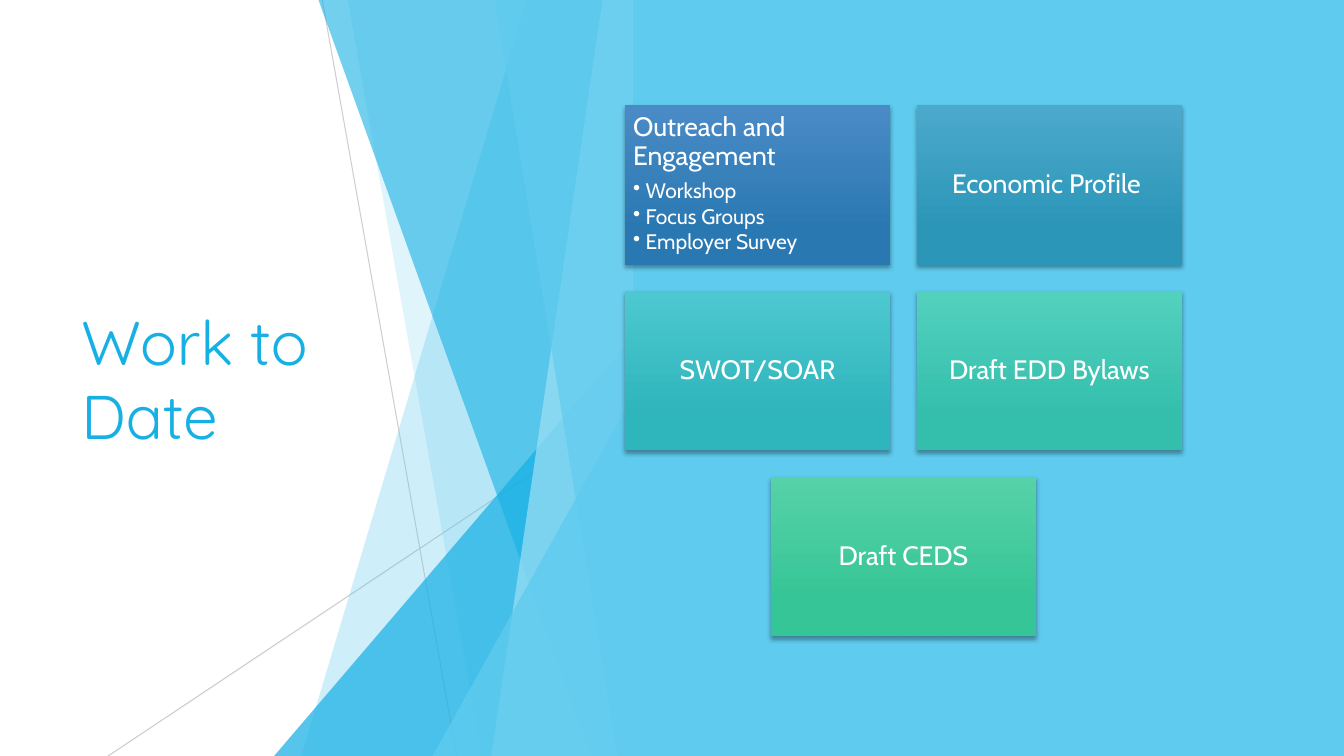
from dataclasses import dataclass

from lxml import etree
from pptx import Presentation
from pptx.dml.color import RGBColor
from pptx.enum.shapes import MSO_CONNECTOR, MSO_SHAPE
from pptx.enum.text import MSO_ANCHOR, MSO_AUTO_SIZE, PP_ALIGN
from pptx.oxml.ns import qn
from pptx.util import Emu, Pt

RECTANGLE, TRIANGLE = MSO_SHAPE.RECTANGLE, MSO_SHAPE.RIGHT_TRIANGLE
TRIANGLE = MSO_SHAPE.ISOSCELES_TRIANGLE
STRAIGHT = MSO_CONNECTOR.STRAIGHT
LEFT, CENTER = PP_ALIGN.LEFT, PP_ALIGN.CENTER
TOP, MIDDLE = MSO_ANCHOR.TOP, MSO_ANCHOR.MIDDLE
NO_AUTOFIT = MSO_AUTO_SIZE.NONE

EMU_PER_PX = 9525
SLIDE_W, SLIDE_H = 1280, 720
PANEL_X = 603
CARD_W, CARD_H = 253, 152
CARD_STEP_X, CARD_STEP_Y = 278, 177
CARDS_X, CARDS_Y = 595, 100


@dataclass(frozen=True)
class Theme:
    title_font: str = "Quicksand"
    body_font: str = "Cabin"
    title_size: int = 44
    card_size: int = 19
    bullet_size: int = 15
    accent: str = "17B0E4"
    sky: str = "5FCBEF"
    pale: str = "9FE0F5"
    hairline: str = "BFBFBF"
    white: str = "FFFFFF"
    shadow: str = "000000"


THEME = Theme()

# Card rows: heading, bullets, gradient top and bottom
CARD_ROWS = [
    [("Outreach and Engagement", ["Workshop", "Focus Groups", "Employer Survey"], "4A8BC6", "2A78B2"),
     ("Economic Profile ", [], "4BA9CC", "2C96B8")],
    [("SWOT/SOAR", [], "4DC8D0", "2FB5BC"),
     ("Draft EDD Bylaws", [], "52D1BE", "34BFAC")],
    [("Draft CEDS", [], "56D2A7", "36C596")],
]


def px(value):
    return Emu(value * EMU_PER_PX)


def set_alpha(fill, color, opacity):
    """Give a solid fill its colour and its opacity in percent."""
    fill.solid()
    fill.fore_color.rgb = RGBColor.from_string(color)
    if opacity < 100:
        element = fill._xPr.find(qn("a:solidFill"))[0]
        etree.SubElement(element, qn("a:alpha"), val=str(opacity * 1000))


def add_block(slide, kind, x, y, w, h):
    block = slide.shapes.add_shape(kind, px(x), px(y), px(w), px(h))
    block.shadow.inherit = False
    block.line.fill.background()
    return block


def add_hairline(slide, start, end, opacity):
    hairline = slide.shapes.add_connector(STRAIGHT, *map(px, start + end))
    hairline.line.width = Pt(0.75)
    set_alpha(hairline.line.fill, THEME.hairline, opacity)
    etree.SubElement(hairline._element.spPr, qn("a:effectLst"))


def add_band(slide, top_x, bottom_x, color, opacity):
    """Slanted band that runs from its left edge to the panel."""
    outline = slide.shapes.build_freeform(top_x, -1, scale=EMU_PER_PX)
    outline.add_line_segments([(PANEL_X, -1), (PANEL_X, SLIDE_H), (bottom_x, SLIDE_H)])
    band = outline.convert_to_shape()
    band.shadow.inherit = False
    band.line.fill.background()
    set_alpha(band.fill, color, opacity)


def add_wedge(slide, x, y, color, opacity):
    """Triangle that rises from the slide's foot to the panel's edge."""
    wedge = add_block(slide, TRIANGLE, x, y, PANEL_X - x, SLIDE_H - y)
    wedge.adjustments[0] = 1
    set_alpha(wedge.fill, color, opacity)


def write(paragraph, text, *, font, size, color, align=LEFT,
          spacing=None, after=0, bullet=False):
    run = paragraph.add_run()
    run.text = text
    run.font.name = font
    run.font.size = Pt(size)
    run.font.color.rgb = RGBColor.from_string(color)
    paragraph.alignment = align
    paragraph.space_after = Pt(after)
    if spacing:
        paragraph.line_spacing = spacing
    if bullet:
        paragraph.level = 1
        properties = paragraph._p.get_or_add_pPr()
        properties.set("marL", str(px(12)))
        properties.set("indent", str(px(-12)))
        etree.SubElement(properties, qn("a:buChar"), char="•")


def add_card_shadow(card):
    effects = card._element.spPr.find(qn("a:effectLst"))
    shadow = etree.SubElement(effects, qn("a:outerShdw"), blurRad=str(Pt(3)),
                              dist=str(Pt(2)), dir="5400000", rotWithShape="0")
    color = etree.SubElement(shadow, qn("a:srgbClr"), val=THEME.shadow)
    etree.SubElement(color, qn("a:alpha"), val="35000")


def add_card(slide, x, y, heading, bullets, top_color, bottom_color):
    card = add_block(slide, RECTANGLE, x, y, CARD_W, CARD_H)
    add_card_shadow(card)
    card.fill.gradient()
    card.fill.gradient_angle = 270
    stops = zip(card.fill.gradient_stops, (0, 0.78), (top_color, bottom_color))
    for stop, position, color in stops:
        stop.position = position
        stop.color.rgb = RGBColor.from_string(color)

    frame = card.text_frame
    frame.word_wrap = True
    frame.vertical_anchor = TOP if bullets else MIDDLE
    frame.margin_left = frame.margin_right = px(8)
    frame.margin_top = frame.margin_bottom = px(8)
    style = {"font": THEME.body_font, "color": THEME.white, "spacing": 0.9}
    write(frame.paragraphs[0], heading, size=THEME.card_size,
          align=LEFT if bullets else CENTER, after=7 if bullets else 0, **style)
    for item in bullets:
        write(frame.add_paragraph(), item, size=THEME.bullet_size,
              after=2, bullet=True, **style)


def add_title(slide, text):
    title = slide.shapes.title
    title.left, title.top, title.width, title.height = map(px, (68, 145, 372, 430))
    frame = title.text_frame
    frame.word_wrap = True
    frame.auto_size = NO_AUTOFIT
    frame.vertical_anchor = MIDDLE
    write(frame.paragraphs[0], text, font=THEME.title_font,
          size=THEME.title_size, color=THEME.accent)


def add_facets(slide):
    add_hairline(slide, (307, 0), (435, SLIDE_H), 75)
    add_hairline(slide, (PANEL_X, 387), (103, SLIDE_H), 80)
    add_band(slide, 502, 287, THEME.sky, 30)
    add_band(slide, 331, 459, THEME.sky, 20)
    add_wedge(slide, 261, 320, THEME.accent, 72)
    add_band(slide, 303, 563, THEME.accent, 60)
    add_band(slide, 574, 468, THEME.pale, 70)
    add_band(slide, 471, 588, THEME.sky, 65)
    add_wedge(slide, 412, 377, THEME.sky, 80)


def main():
    presentation = Presentation()
    presentation.slide_width, presentation.slide_height = px(SLIDE_W), px(SLIDE_H)
    slide = presentation.slides.add_slide(presentation.slide_layouts[5])

    # Faceted backdrop and title
    add_facets(slide)
    add_title(slide, "Work to Date")

    # Panel with centred rows of cards
    panel = add_block(slide, RECTANGLE, PANEL_X, 0, SLIDE_W - PANEL_X, SLIDE_H)
    set_alpha(panel.fill, THEME.sky, 100)
    for row, cards in enumerate(CARD_ROWS):
        row_x = CARDS_X + (2 - len(cards)) * CARD_STEP_X // 2
        for column, card in enumerate(cards):
            add_card(slide, row_x + column * CARD_STEP_X,
                     CARDS_Y + row * CARD_STEP_Y, *card)

    presentation.save("out.pptx")


if __name__ == "__main__":
    main()
